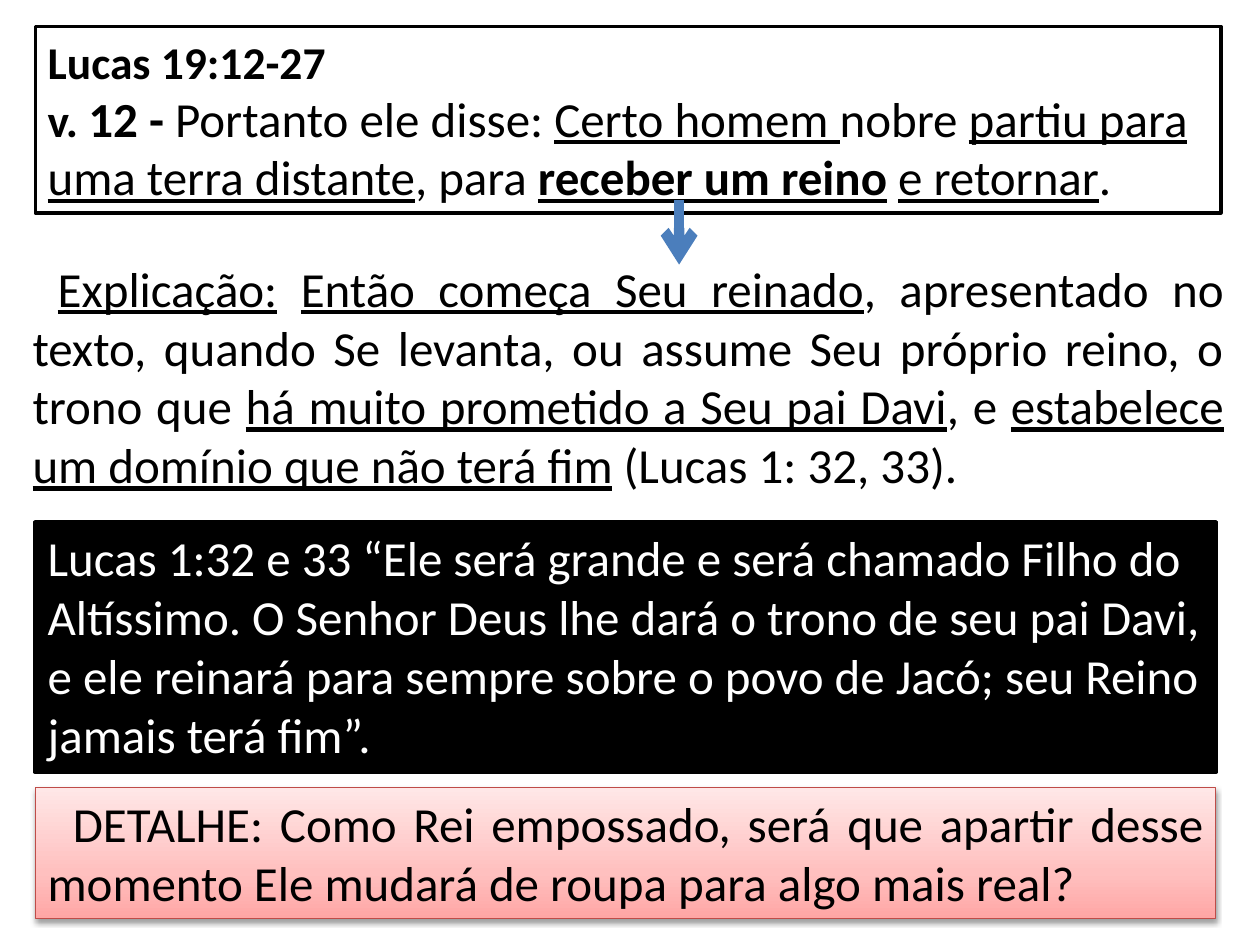
from copy import deepcopy
from dataclasses import dataclass
from typing import NamedTuple

from lxml.etree import SubElement
from pptx import Presentation
from pptx.dml.color import RGBColor
from pptx.enum.shapes import MSO_CONNECTOR, MSO_SHAPE
from pptx.enum.text import MSO_ANCHOR, MSO_AUTO_SIZE, PP_ALIGN
from pptx.oxml.ns import qn
from pptx.util import Inches, Pt

COLORS = {
    "black": "000000",
    "white": "FFFFFF",
    "arrow": "4B7EBC",
    "detail_line": "BF4C48",
}
DETAIL_GRADIENT = [(0, "FFA6A5"), (0.35, "FFC0BF"), (1, "FFE7E7")]


class Span(NamedTuple):
    text: str
    bold: bool = False
    underline: bool = False
    size: float = 28


@dataclass
class Panel:
    left: float
    top: float
    width: float
    height: float
    paragraphs: list[list[Span]]
    fill: str | None = None
    line: str | None = None
    line_width: float = 2
    text_color: str = "black"
    anchor: MSO_ANCHOR = MSO_ANCHOR.TOP
    justified: bool = False


def rgb(name: str) -> RGBColor:
    return RGBColor.from_string(COLORS[name])


def add_run(paragraph, text: str, *, size: float, color: str,
            bold: bool = False, underline: bool = False) -> None:
    run = paragraph.add_run()
    run.text = text
    font = run.font
    font.name, font.size = "Calibri", Pt(size)
    font.bold, font.underline = bold, underline
    font.color.rgb = rgb(color)


def add_panel(slide, panel: Panel):
    box = [Inches(v) for v in (panel.left, panel.top, panel.width, panel.height)]
    if panel.line:
        shape = slide.shapes.add_shape(MSO_SHAPE.RECTANGLE, *box)
        shape.shadow.inherit = False
        shape.line.color.rgb = rgb(panel.line)
        shape.line.width = Pt(panel.line_width)
    else:
        shape = slide.shapes.add_textbox(*box)
    if panel.fill:
        shape.fill.solid()
        shape.fill.fore_color.rgb = rgb(panel.fill)

    frame = shape.text_frame
    frame.word_wrap = True
    frame.auto_size = MSO_AUTO_SIZE.SHAPE_TO_FIT_TEXT
    frame.vertical_anchor = panel.anchor
    for index, spans in enumerate(panel.paragraphs):
        paragraph = frame.add_paragraph() if index else frame.paragraphs[0]
        paragraph.alignment = PP_ALIGN.JUSTIFY if panel.justified else PP_ALIGN.LEFT
        if panel.justified:
            paragraph._p.get_or_add_pPr().set("indent", str(Inches(0.2)))
        for span in spans:
            add_run(paragraph, span.text, size=span.size, color=panel.text_color,
                    bold=span.bold, underline=span.underline)
    return shape


def set_gradient(shape, stops: list[tuple[float, str]], angle: float) -> None:
    shape.fill.gradient()
    shape.fill.gradient_angle = angle
    stop_list = shape._element.spPr.find(qn("a:gradFill")).find(qn("a:gsLst"))
    while len(stop_list) < len(stops):
        stop_list.append(deepcopy(stop_list[0]))
    for stop, (position, color) in zip(shape.fill.gradient_stops, stops):
        stop.position = position
        stop.color.rgb = RGBColor.from_string(color)


def set_shadow(shape, *, blur: float, distance: float, opacity: int) -> None:
    effects = shape._element.spPr.find(qn("a:effectLst"))
    shadow = SubElement(effects, qn("a:outerShdw"), blurRad=str(Pt(blur)),
                        dist=str(Pt(distance)), dir="5400000", rotWithShape="0")
    color = SubElement(shadow, qn("a:srgbClr"), val=COLORS["black"])
    SubElement(color, qn("a:alpha"), val=str(opacity * 1000))


def add_down_arrow(slide, x: float, top: float, bottom: float) -> None:
    arrow = slide.shapes.add_connector(MSO_CONNECTOR.STRAIGHT, Inches(x), Inches(top),
                                       Inches(x), Inches(bottom))
    arrow.line.color.rgb = rgb("arrow")
    arrow.line.width = Pt(6)
    properties = arrow._element.spPr
    SubElement(properties.find(qn("a:ln")), qn("a:tailEnd"), type="arrow")
    SubElement(properties, qn("a:effectLst"))


EXPLANATION = Panel(0.16, 2, 9.65, 1.99, justified=True, paragraphs=[[
    Span("Explicação:", underline=True),
    Span(" "),
    Span("Então começa Seu reinado", underline=True),
    Span(", apresentado no texto, quando Se levanta, ou assume Seu próprio reino, "
         "o trono que "),
    Span("há muito prometido a Seu pai Davi", underline=True),
    Span(", e "),
    Span("estabelece um domínio que não terá fim", underline=True),
    Span(" (Lucas 1: 32, 33). "),
]])

VERSE = Panel(
    0.28, 0.21, 9.41, 1.48, fill="white", line="black", anchor=MSO_ANCHOR.MIDDLE,
    paragraphs=[
        [Span("Lucas 19:12-27", bold=True, size=26)],
        [
            Span("v. ", bold=True, size=26),
            Span("12 - ", bold=True),
            Span("Portanto ele disse: "),
            Span("Certo homem ", underline=True),
            Span("nobre "),
            Span("partiu para uma terra distante", underline=True),
            Span(", para "),
            Span("receber um reino", bold=True, underline=True),
            Span(" ", bold=True),
            Span("e retornar", underline=True),
            Span(". "),
        ],
    ])

PROMISE = Panel(
    0.28, 4.14, 9.37, 1.99, fill="black", line="black", text_color="white",
    paragraphs=[[Span(
        "Lucas 1:32 e 33 “Ele será grande e será chamado Filho do Altíssimo. "
        "O Senhor Deus lhe dará o trono de seu pai Davi, e ele reinará para sempre "
        "sobre o povo de Jacó; seu Reino jamais terá fim”.")]])

DETAIL = Panel(
    0.28, 6.25, 9.37, 1.04, line="detail_line", line_width=0.75, justified=True,
    paragraphs=[[Span("DETALHE: Como Rei empossado, será que apartir desse momento "
                      "Ele mudará de roupa para algo mais real?")]])


def main() -> None:
    presentation = Presentation()
    presentation.slide_width, presentation.slide_height = Inches(10), Inches(7.5)
    slide = presentation.slides.add_slide(presentation.slide_layouts[6])

    # Verse, its explanation and the arrow between them
    add_panel(slide, EXPLANATION)
    add_panel(slide, VERSE)
    add_down_arrow(slide, 5.39, 1.59, 2.1)

    # Promise and closing question
    add_panel(slide, PROMISE)
    detail = add_panel(slide, DETAIL)
    set_gradient(detail, DETAIL_GRADIENT, angle=90)
    set_shadow(detail, blur=3.1, distance=1.6, opacity=38)

    presentation.save("out.pptx")


if __name__ == "__main__":
    main()
